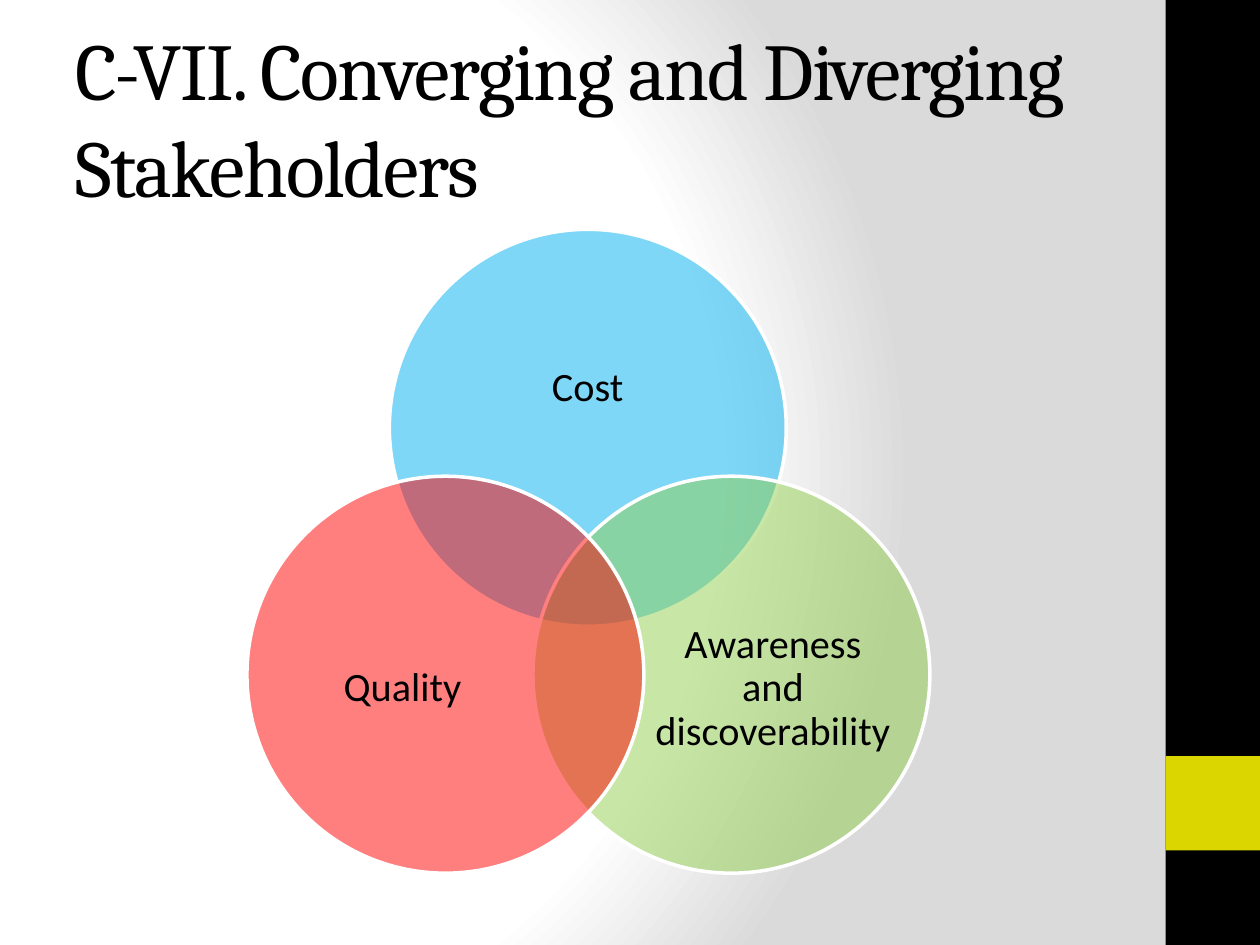
"""Build a slide with a three-circle Venn diagram of stakeholder concerns."""
from dataclasses import dataclass

from lxml.etree import SubElement
from pptx import Presentation
from pptx.dml.color import RGBColor
from pptx.enum.shapes import MSO_SHAPE as SHAPE
from pptx.enum.text import MSO_ANCHOR as ANCHOR, MSO_AUTO_SIZE as AUTO, PP_ALIGN as ALIGN
from pptx.oxml import parse_xml
from pptx.oxml.ns import nsdecls, qn
from pptx.util import Inches, Pt

Box = tuple[float, float, float, float]
DIAMETER = 3.15
GRADIENT = ((0, "FFFFFF"), (75, "FFFFFF"), (100, "DADADA"))


@dataclass
class Circle:
    label: str
    color: str
    left: float
    top: float
    label_box: Box


CIRCLES = (
    Circle("Cost", "00B0F0", 3.09, 1.82, (3.51, 2.37, 2.31, 1.42)),
    Circle("Awareness and discoverability", "92D050", 4.23, 3.78, (5.19, 4.6, 1.89, 1.73)),
    Circle("Quality", "FF0000", 1.96, 3.78, (2.25, 4.6, 1.89, 1.73)),
)


def rgb(value: str) -> RGBColor:
    return RGBColor.from_string(value)


def set_font(p, name: str, size: float) -> None:
    p.font.name, p.font.size = name, Pt(size)
    p.font.color.rgb = rgb("000000")


def set_background(s) -> None:
    s.background.fill.gradient()
    stops = "".join(
        f'<a:gs pos="{pos * 1000}"><a:srgbClr val="{color}"/></a:gs>' for pos, color in GRADIENT
    )
    new = parse_xml(
        f'<a:gradFill {nsdecls("a")} rotWithShape="1"><a:gsLst>{stops}</a:gsLst>'
        '<a:path path="circle"><a:fillToRect l="20000" t="50000" r="100000" b="50000"/>'
        "</a:path></a:gradFill>"
    )
    old = next(s.element.iter(qn("a:gradFill")))
    old.getparent().replace(old, new)


def add_filled(shapes, kind: SHAPE, box: Box, color: str):
    sp = shapes.add_shape(kind, *map(Inches, box))
    sp.shadow.inherit = False
    sp.fill.solid()
    sp.fill.fore_color.rgb = rgb(color)
    sp.line.fill.background()
    return sp


def add_title(s, text: str) -> None:
    sp = s.shapes.title
    sp.left, sp.top, sp.width, sp.height = map(Inches, (0.5, 0.3, 8.33, 1.25))
    tf = sp.text_frame
    tf.text = text
    tf.word_wrap, tf.auto_size, tf.vertical_anchor = True, AUTO.NONE, ANCHOR.MIDDLE
    p = tf.paragraphs[0]
    p.alignment = ALIGN.LEFT
    set_font(p, "Cambria", 46)
    p.runs[0].font._element.set("spc", "-100")


def add_circle(shapes, circle: Circle) -> None:
    box = (circle.left, circle.top, DIAMETER, DIAMETER)
    sp = add_filled(shapes, SHAPE.OVAL, box, circle.color)
    sp.line.color.rgb = rgb("FFFFFF")
    sp.line.width = Pt(2)
    fill_color = sp.element.spPr.find(qn("a:solidFill"))[0]
    SubElement(fill_color, qn("a:alpha"), val="50000")

    tf = shapes.add_textbox(*map(Inches, circle.label_box)).text_frame
    tf.word_wrap, tf.vertical_anchor = True, ANCHOR.MIDDLE
    tf.margin_left = tf.margin_top = tf.margin_right = tf.margin_bottom = 0
    p = tf.paragraphs[0]
    p.text, p.alignment, p.line_spacing = circle.label, ALIGN.CENTER, 0.9
    set_font(p, "Calibri", 23)


def main() -> None:
    prs = Presentation()
    prs.slide_width, prs.slide_height = Inches(10), Inches(7.5)
    s = prs.slides.add_slide(prs.slide_layouts[5])
    set_background(s)
    add_filled(s.shapes, SHAPE.RECTANGLE, (9.25, 0, 0.75, 7.5), "000000")
    add_filled(s.shapes, SHAPE.RECTANGLE, (9.25, 6, 0.75, 0.75), "DBD600")
    add_title(s, "C-VII. Converging and Diverging Stakeholders")
    venn = s.shapes.add_group_shape()
    for circle in CIRCLES:
        add_circle(venn.shapes, circle)
    prs.save("out.pptx")


if __name__ == "__main__":
    main()
